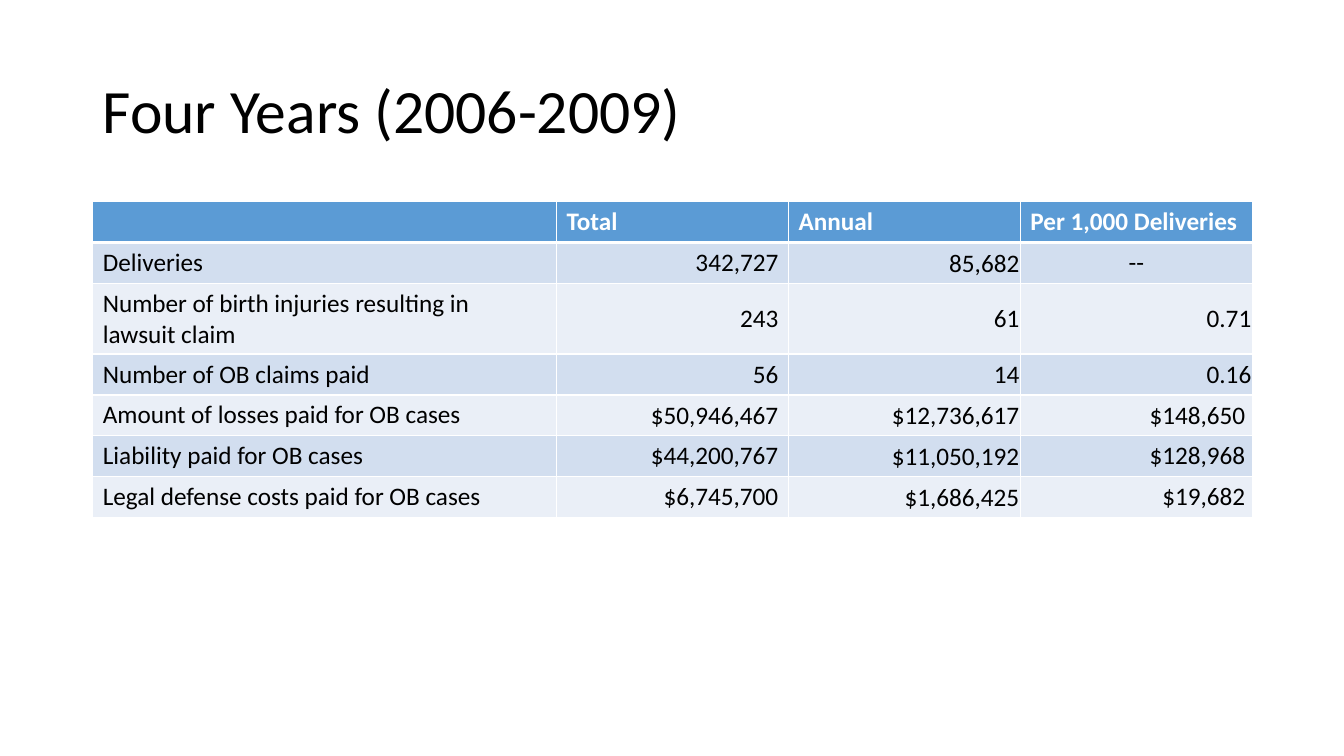
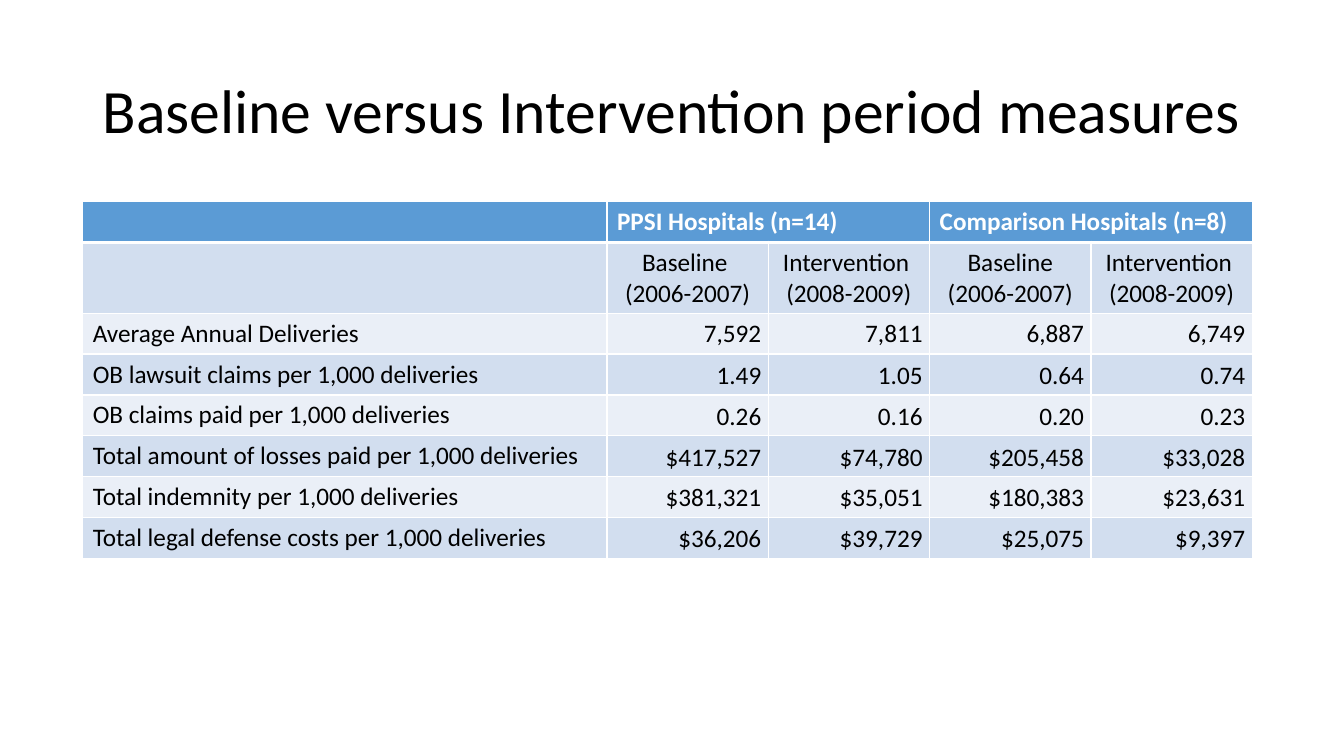
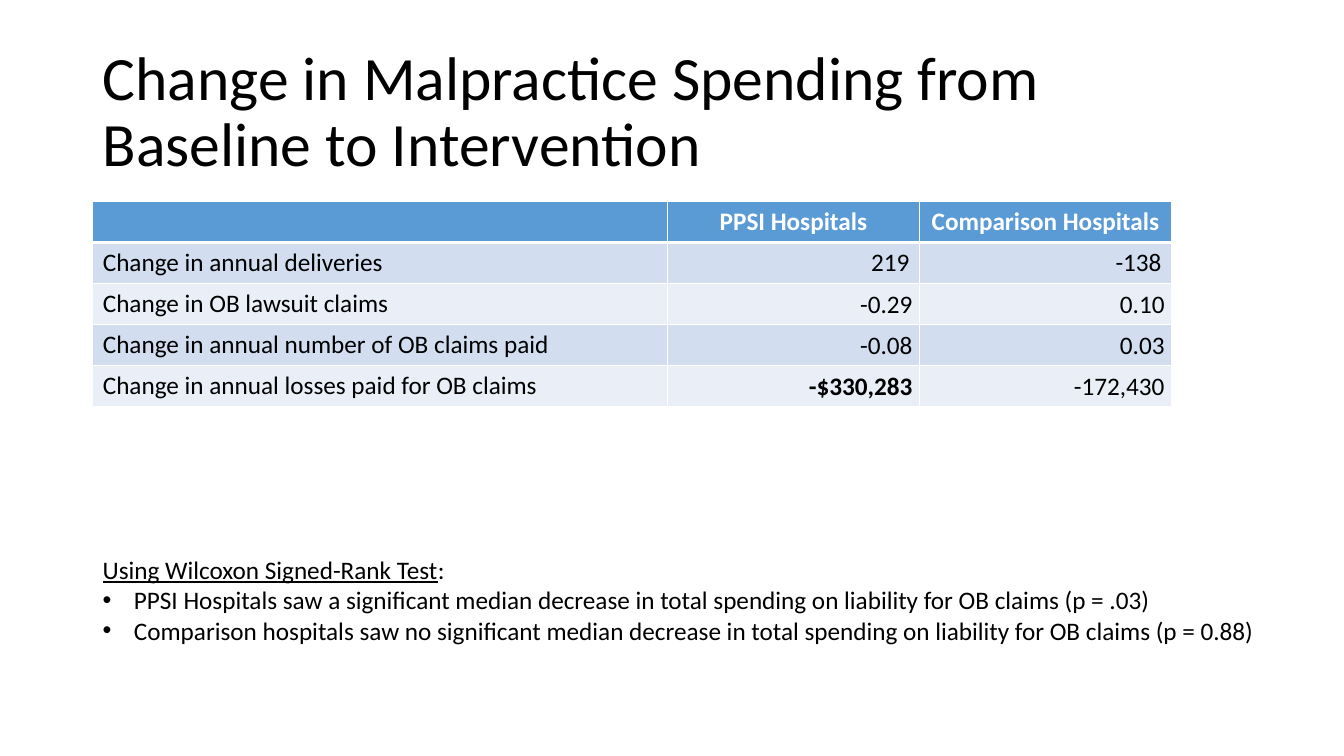
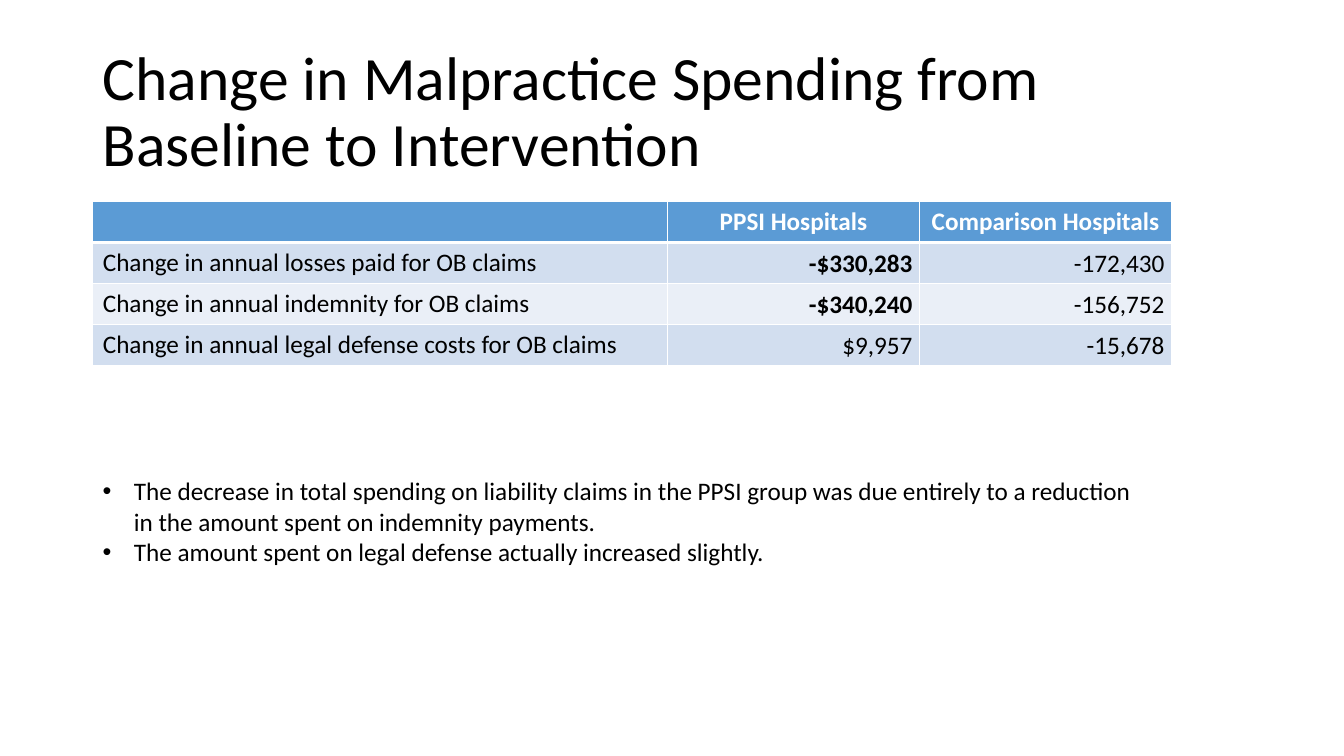
import pptx
import pptx.dml.color
import pptx.enum.text
import pptx.oxml.ns
import pptx.util
from lxml import etree

Inches = pptx.util.Inches
Pt = pptx.util.Pt
RGBColor = pptx.dml.color.RGBColor
ALIGN = pptx.enum.text.PP_ALIGN
ANCHOR = pptx.enum.text.MSO_ANCHOR
FIT = pptx.enum.text.MSO_AUTO_SIZE
qn = pptx.oxml.ns.qn

BLACK = RGBColor(0x00, 0x00, 0x00)
WHITE = RGBColor(0xFF, 0xFF, 0xFF)
HEADER_BLUE = RGBColor(0x5B, 0x9B, 0xD5)
BANDS = (RGBColor(0xD2, 0xDE, 0xEF), RGBColor(0xEA, 0xEF, 0xF7))

FONT = "Calibri"
BODY_SIZE = Pt(18)
LEFT = Inches(0.92)
TABLE_TOP = Inches(2)
ROW_HEIGHT = Inches(2.03) // 5
TITLE_BOX = (LEFT, Inches(0.4), Inches(11.5), Inches(1.45))

FLUSH = dict(margin_left=Inches(0.01), margin_top=Inches(0.01),
             margin_right=Inches(0.01), margin_bottom=0)
SNUG = dict(margin_left=Inches(0.07), margin_top=0,
            margin_right=Inches(0.07), margin_bottom=0)
MIDDLE = dict(vertical_anchor=ANCHOR.MIDDLE)
RIGHT = dict(alignment=ALIGN.RIGHT)
SPACED = dict(alignment=ALIGN.RIGHT, line_spacing=1.07)

CELL_STYLES = {
    "L": ({}, dict(alignment=ALIGN.LEFT), {}),
    "T": ({}, dict(alignment=ALIGN.CENTER), {}),
    "C": (MIDDLE, dict(alignment=ALIGN.CENTER), {}),
    "R": (MIDDLE, RIGHT, {}),
    "F": (MIDDLE | FLUSH, RIGHT, {}),
    "S": (MIDDLE | SNUG, RIGHT, {}),
    "P": (MIDDLE | SNUG, SPACED, {}),
    "B": (MIDDLE | SNUG, SPACED, dict(bold=True)),
}

FOUR_YEARS = [
    ("LLLL", "", "Total", "Annual", "Per 1,000 Deliveries"),
    ("LRFC", "Deliveries", "342,727", "85,682", "--"),
    ("LRFF", "Number of birth injuries resulting in lawsuit claim", "243", "61", "0.71"),
    ("LRFF", "Number of OB claims paid", "56", "14", "0.16"),
    ("LRFS", "Amount of losses paid for OB cases", "$50,946,467", "$12,736,617", "$148,650"),
    ("LRFS", "Liability paid for OB cases", "$44,200,767", "$11,050,192", "$128,968"),
    ("LRFS", "Legal defense costs paid for OB cases", "$6,745,700", "$1,686,425", "$19,682"),
]

PERIODS = [
    ("LLLLL", "", "PPSI Hospitals (n=14)", None, "Comparison Hospitals (n=8)", None),
    ("LTTTT", "", "Baseline \n(2006-2007)", "Intervention \n(2008-2009)",
     "Baseline\n(2006-2007)", "Intervention \n(2008-2009)"),
    ("LSSSS", "Average Annual Deliveries", "7,592", "7,811", "6,887", "6,749"),
    ("LPPPP", "OB lawsuit claims per 1,000 deliveries", "1.49", "1.05", "0.64", "0.74"),
    ("LPPPP", "OB claims paid per 1,000 deliveries", "0.26", "0.16", "0.20", "0.23"),
    ("LPPPP", "Total amount of losses paid per 1,000 deliveries",
     "$417,527", "$74,780", "$205,458", "$33,028"),
    ("LPPPP", "Total indemnity per 1,000 deliveries",
     "$381,321", "$35,051", "$180,383", "$23,631"),
    ("LPPPP", "Total legal defense costs per 1,000 deliveries",
     "$36,206", "$39,729", "$25,075", "$9,397"),
]

CHANGE_TITLE = "Change in Malpractice Spending from Baseline to Intervention"
CHANGE_WIDTHS = (5.7, 2.5, 2.5)
CHANGE_HEADER = ("LTT", "", "PPSI Hospitals", "Comparison Hospitals")
CHANGE_LOSSES = ("LBP", "Change in annual losses paid for OB claims", "-$330,283", "-172,430")

CLAIM_CHANGES = [
    CHANGE_HEADER,
    ("LRR", "Change in annual deliveries", "219", "-138"),
    ("LPP", "Change in OB lawsuit claims", "-0.29", "0.10"),
    ("LPP", "Change in annual number of OB claims paid", "-0.08", "0.03"),
    CHANGE_LOSSES,
]

COST_CHANGES = [
    CHANGE_HEADER,
    CHANGE_LOSSES,
    ("LBP", "Change in annual indemnity for OB claims", "-$340,240", "-156,752"),
    ("LPP", "Change in annual legal defense costs for OB claims", "$9,957", "-15,678"),
]


def apply(target, values):
    for name, value in values.items():
        setattr(target, name, value)


def add_run(paragraph, text, color=BLACK, **values):
    run = paragraph.add_run()
    run.text = text
    apply(run.font, dict(name=FONT, size=BODY_SIZE) | values)
    run.font.color.rgb = color


def add_paragraph(frame, index):
    return frame.add_paragraph() if index else frame.paragraphs[0]


def add_title(slide, text, box):
    frame = slide.shapes.add_textbox(*box).text_frame
    apply(frame, dict(word_wrap=True, vertical_anchor=ANCHOR.MIDDLE))
    paragraph = frame.paragraphs[0]
    paragraph.line_spacing = 0.9
    add_run(paragraph, text, size=Pt(44))


def add_borders(cell, widths):
    properties = cell._tc.get_or_add_tcPr()
    for position, (side, width) in enumerate(widths.items()):
        line = etree.Element(qn("a:ln" + side), w=str(Pt(width)))
        fill = etree.SubElement(line, qn("a:solidFill"))
        etree.SubElement(fill, qn("a:srgbClr"), val=str(WHITE))
        properties.insert(position, line)


def fill_cell(cell, text, style, row):
    cell_format, paragraph_format, font_format = CELL_STYLES[style]
    apply(cell, cell_format)
    cell.fill.solid()
    cell.fill.fore_color.rgb = BANDS[(row - 1) % 2] if row else HEADER_BLUE
    add_borders(cell, dict(L=1, R=1, T=3 if row == 1 else 1, B=1 if row else 3))
    if not text:
        return
    if row == 0:
        font_format = dict(color=WHITE, bold=True)
    for index, line in enumerate(text.split("\n")):
        paragraph = add_paragraph(cell.text_frame, index)
        apply(paragraph, paragraph_format)
        add_run(paragraph, line, **(dict(bold=False) | font_format))


def add_measures(slide, rows, widths, left=LEFT, top=TABLE_TOP):
    table = slide.shapes.add_table(len(rows), len(widths), left, top,
                                   Inches(sum(widths)), ROW_HEIGHT * len(rows)).table
    for column, width in zip(table.columns, widths):
        column.width = Inches(width)
    for row, (styles, *texts) in enumerate(rows):
        for column, (style, text) in enumerate(zip(styles, texts)):
            cell = table.cell(row, column)
            fill_cell(cell, text, style, row)
            if text is None:
                table.cell(row, column - 1).merge(cell)


def add_findings(slide, box, findings, heading=None, wrap=True):
    frame = slide.shapes.add_textbox(*box).text_frame
    apply(frame, dict(word_wrap=wrap, auto_size=FIT.SHAPE_TO_FIT_TEXT))
    if heading:
        add_run(frame.paragraphs[0], heading, underline=True)
        add_run(frame.paragraphs[0], ":")
    for index, finding in enumerate(findings, 1 if heading else 0):
        paragraph = add_paragraph(frame, index)
        properties = paragraph._p.get_or_add_pPr()
        properties.set("marL", str(Inches(0.31)))
        properties.set("indent", str(-Inches(0.31)))
        etree.SubElement(properties, qn("a:buFont"), typeface="Arial")
        etree.SubElement(properties, qn("a:buChar"), char="•")
        add_run(paragraph, finding)


def add_measure_slide(deck, title, rows, widths, left=LEFT):
    slide = deck.slides.add_slide(deck.slide_layouts[6])
    add_title(slide, title, TITLE_BOX)
    add_measures(slide, rows, widths, left)
    return slide


def main():
    deck = pptx.Presentation()
    deck.slide_width, deck.slide_height = Inches(13.33), Inches(7.5)

    add_measure_slide(deck, "Four Years (2006-2009)", FOUR_YEARS, (4.6, 2.3, 2.3, 2.3))
    add_measure_slide(deck, "Baseline versus Intervention period measures",
                      PERIODS, (5.2, 1.6, 1.6, 1.6, 1.6), Inches(0.82))

    claims = add_measure_slide(deck, CHANGE_TITLE, CLAIM_CHANGES, CHANGE_WIDTHS)
    add_findings(claims, (LEFT, Inches(5.45), Inches(11.82), Inches(1.01)), [
        "PPSI Hospitals saw a significant median decrease in total spending "
        "on liability for OB claims (p = .03)",
        "Comparison hospitals saw no significant median decrease in total spending "
        "on liability for OB claims (p = 0.88)",
    ], heading="Using Wilcoxon Signed-Rank Test", wrap=False)

    costs = add_measure_slide(deck, CHANGE_TITLE, COST_CHANGES, CHANGE_WIDTHS)
    add_findings(costs, (LEFT, Inches(4.67), Inches(10.53), Inches(1.31)), [
        "The decrease in total spending on liability claims in the PPSI group was due "
        "entirely to a reduction in the amount spent on indemnity payments.",
        "The amount spent on legal defense actually increased slightly.",
    ])

    deck.save("out.pptx")


if __name__ == "__main__":
    main()
